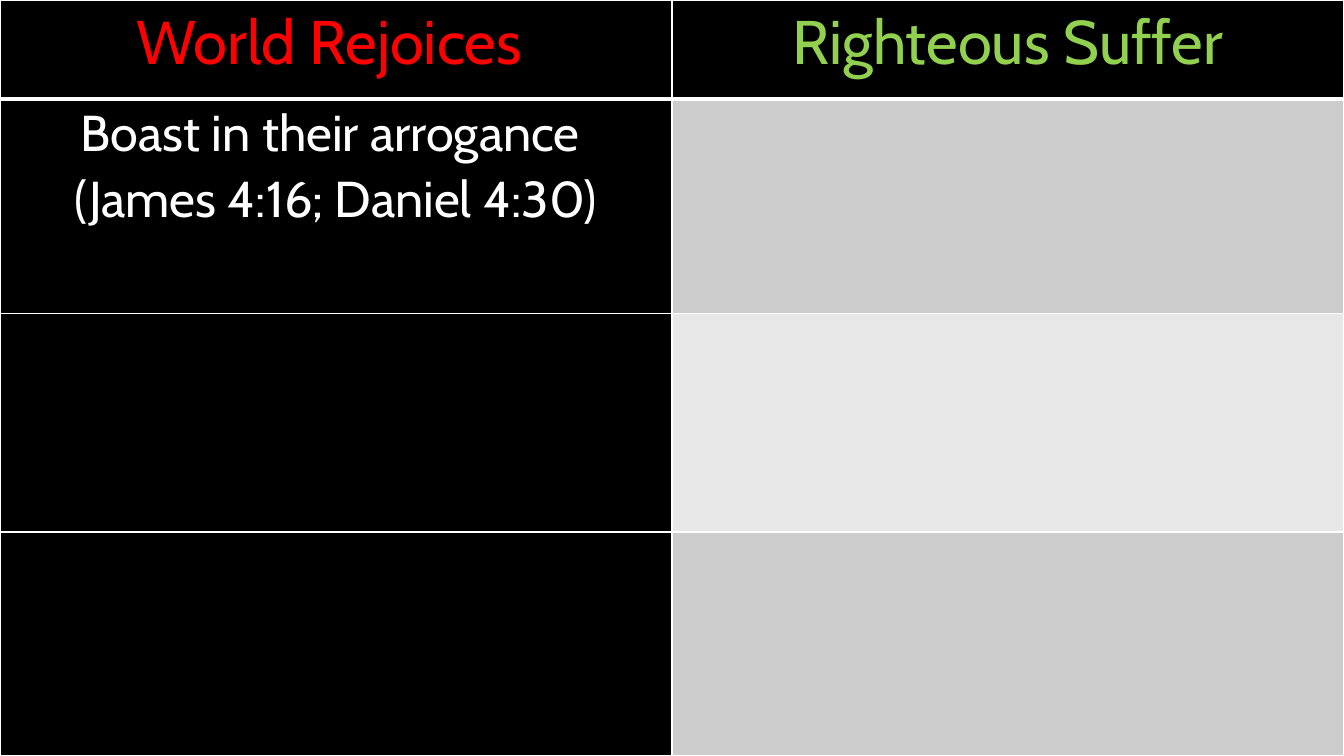
from lxml.etree import SubElement
from pptx import Presentation
from pptx.dml.color import RGBColor
from pptx.enum.text import PP_ALIGN
from pptx.oxml.ns import qn
from pptx.util import Pt

COLORS = {
    "black": "000000",
    "white": "FFFFFF",
    "red": "FF0000",
    "green": "92D050",
    "dark band": "CCCCCC",
    "light band": "E7E7E7",
}
SLIDE_WIDTH, SLIDE_HEIGHT = 960, 540
ROW_HEIGHTS = [70.5, 153.5, 156, 160]
RIGHT_FILLS = ["black", "dark band", "light band", "dark band"]
CELL_FORMAT = {
    "margin_left": Pt(5),
    "margin_right": Pt(5),
    "margin_top": Pt(0),
    "margin_bottom": Pt(0),
}
PARAGRAPH_FORMAT = {"alignment": PP_ALIGN.CENTER, "line_spacing": 1.07}


def color(name):
    return RGBColor.from_string(COLORS[name])


def set_attributes(target, values):
    for name, value in values.items():
        setattr(target, name, value)


def set_borders(cell, widths):
    """Give the cell white borders; widths maps sides L, R, T, B to points."""
    properties = cell._tc.get_or_add_tcPr()
    for side, width in widths.items():
        line = SubElement(properties, qn(f"a:ln{side}"), w=str(Pt(width)))
        fill = SubElement(line, qn("a:solidFill"))
        SubElement(fill, qn("a:srgbClr"), val=COLORS["white"])


def write_cell(cell, lines, size, color_name):
    set_attributes(cell, CELL_FORMAT)
    cell.text = "\n".join(lines)
    font_format = {"name": "Cabin", "size": Pt(size)}
    for paragraph in cell.text_frame.paragraphs:
        set_attributes(paragraph, PARAGRAPH_FORMAT)
        for run in paragraph.runs:
            set_attributes(run.font, font_format)
            run.font.color.rgb = color(color_name)


def add_comparison_table(slide):
    frame = slide.shapes.add_table(
        len(ROW_HEIGHTS), 2, Pt(0), Pt(0), Pt(SLIDE_WIDTH), Pt(SLIDE_HEIGHT)
    )
    table = frame.table
    table.horz_banding = False
    for row_index, height in enumerate(ROW_HEIGHTS):
        table.rows[row_index].height = Pt(height)
        top = 3 if row_index == 1 else 1
        bottom = 3 if row_index == 0 else 1
        for column_index, fill in enumerate(["black", RIGHT_FILLS[row_index]]):
            cell = table.cell(row_index, column_index)
            set_borders(cell, {"L": 1, "R": 1, "T": top, "B": bottom})
            cell.fill.solid()
            cell.fill.fore_color.rgb = color(fill)
    return table


def main():
    presentation = Presentation()
    presentation.slide_width = Pt(SLIDE_WIDTH)
    presentation.slide_height = Pt(SLIDE_HEIGHT)
    slide = presentation.slides.add_slide(presentation.slide_layouts[6])
    slide.background.fill.solid()
    slide.background.fill.fore_color.rgb = color("black")

    table = add_comparison_table(slide)

    # Column headings
    write_cell(table.cell(0, 0), ["World Rejoices "], 44, "red")
    write_cell(table.cell(0, 1), ["Righteous Suffer"], 44, "green")

    # First comparison
    boast = ["Boast in their arrogance ", "(James 4:16; Daniel 4:30)"]
    write_cell(table.cell(1, 0), boast, 36, "white")

    presentation.save("out.pptx")


if __name__ == "__main__":
    main()
